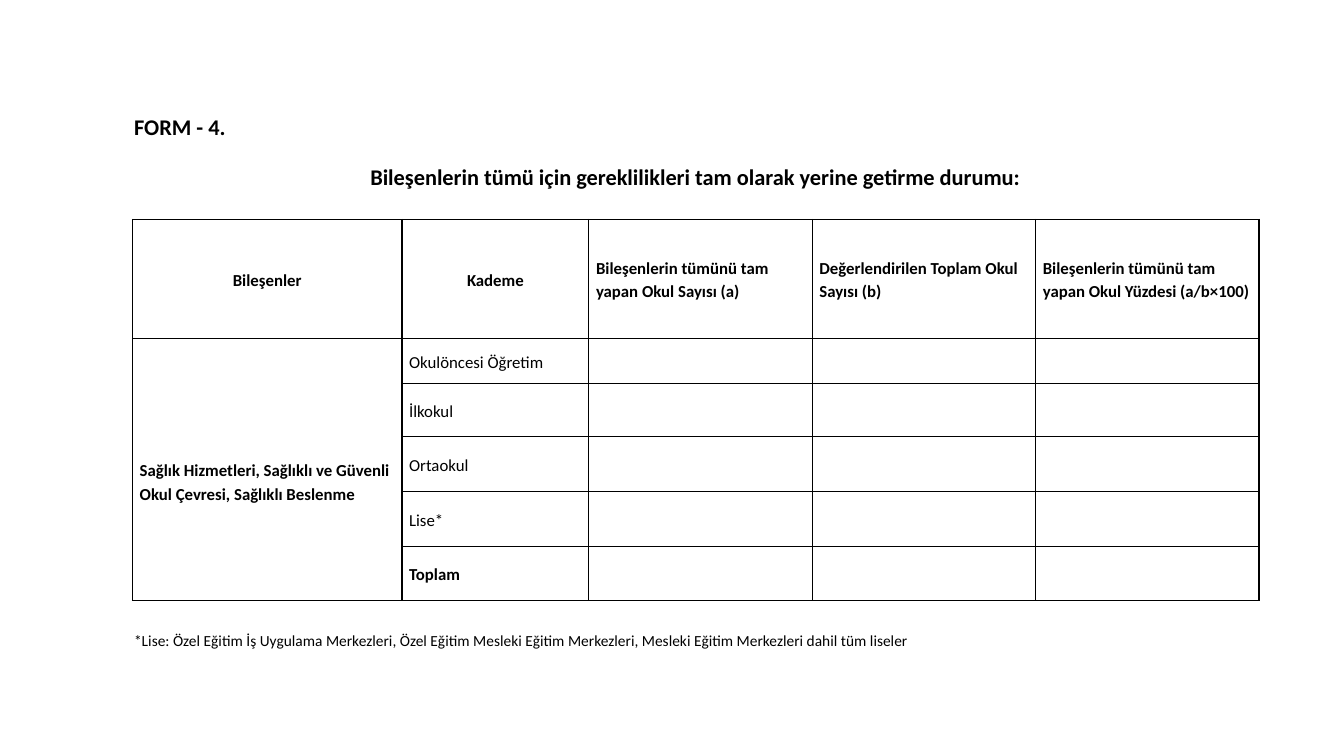
import pptx
import pptx.dml.color
import pptx.enum.text
import pptx.oxml.ns
import pptx.util
from lxml import etree
from pptx.util import Cm

COLORS = {"text": "000000", "border": "000000", "cell": "FFFFFF"}
FONT = "Calibri"
ALIGN = pptx.enum.text.PP_ALIGN
MIDDLE = pptx.enum.text.MSO_ANCHOR.MIDDLE

HEADERS = [
    "Bileşenler",
    "Kademe",
    "Bileşenlerin tümünü tam yapan Okul Sayısı (a)",
    "Değerlendirilen Toplam Okul Sayısı (b)",
    "Bileşenlerin tümünü tam yapan Okul Yüzdesi (a/b×100)",
]
COMPONENTS = "Sağlık Hizmetleri, Sağlıklı ve Güvenli Okul Çevresi, Sağlıklı Beslenme"
LEVELS = ["Okulöncesi Öğretim", "İlkokul", "Ortaokul", "Lise*", "Toplam"]
COLUMN_WIDTHS = [6.79, 4.71, 5.63, 5.63, 5.63]
ROW_HEIGHTS = [3, 1.13, 1.34, 1.39, 1.38, 1.37]


def color(name):
    return pptx.dml.color.RGBColor.from_string(COLORS[name])


def write(paragraph, text, size, bold=False, alignment=None):
    paragraph.alignment = alignment
    run = paragraph.add_run()
    run.text = text
    run.font.name = FONT
    run.font.size = pptx.util.Pt(size)
    run.font.bold = bold
    run.font.color.rgb = color("text")


def add_text(slide, left, top, width, height, text, size, bold=False, alignment=None):
    shape = slide.shapes.add_textbox(Cm(left), Cm(top), Cm(width), Cm(height))
    frame = shape.text_frame
    frame.word_wrap = True
    frame.auto_size = pptx.enum.text.MSO_AUTO_SIZE.SHAPE_TO_FIT_TEXT
    frame.vertical_anchor = MIDDLE
    write(frame.paragraphs[0], text, size, bold, alignment)


def add_borders(cell):
    properties = cell._tc.get_or_add_tcPr()
    qn = pptx.oxml.ns.qn
    for side in ("a:lnL", "a:lnR", "a:lnT", "a:lnB"):
        line = etree.SubElement(properties, qn(side), w=str(pptx.util.Pt(1)))
        fill = etree.SubElement(line, qn("a:solidFill"))
        etree.SubElement(fill, qn("a:srgbClr"), val=COLORS["border"])


def format_cell(cell):
    add_borders(cell)
    cell.fill.solid()
    cell.fill.fore_color.rgb = color("cell")
    cell.margin_left = cell.margin_right = Cm(0.18)
    cell.margin_top = cell.margin_bottom = 0
    cell.vertical_anchor = MIDDLE


def write_cell(cell, text, bold=False, alignment=None):
    paragraph = cell.text_frame.paragraphs[0]
    paragraph.line_spacing = 1.15
    write(paragraph, text, 12, bold, alignment)


def add_form_table(slide):
    frame = slide.shapes.add_table(
        len(ROW_HEIGHTS), len(COLUMN_WIDTHS), Cm(3.34), Cm(5.53),
        Cm(sum(COLUMN_WIDTHS)), Cm(sum(ROW_HEIGHTS)))
    table = frame.table
    table.first_row = table.horz_banding = False
    for column, width in zip(table.columns, COLUMN_WIDTHS):
        column.width = Cm(width)
    for row, height in zip(table.rows, ROW_HEIGHTS):
        row.height = Cm(height)
    for cell in table.iter_cells():
        format_cell(cell)

    # Header row
    for index, header in enumerate(HEADERS):
        write_cell(table.cell(0, index), header, True, ALIGN.CENTER if index < 2 else None)

    # Components cell, set slightly below the middle
    components = table.cell(1, 0)
    components.merge(table.cell(len(LEVELS), 0))
    components.margin_top = Cm(0.59)
    write_cell(components, COMPONENTS, True)

    # School levels
    for row, level in enumerate(LEVELS, start=1):
        write_cell(table.cell(row, 1), level, bold=level == "Toplam")


def main():
    presentation = pptx.Presentation()
    presentation.slide_width = Cm(33.87)
    presentation.slide_height = Cm(19.05)
    slide = presentation.slides.add_slide(presentation.slide_layouts[6])

    # Form number and title
    add_text(slide, 3.13, 2.72, 6.4, 0.94, "FORM - 4.", 16, True)
    add_text(slide, 3.33, 3.99, 28.4, 0.94,
             "Bileşenlerin tümü için gereklilikleri tam olarak yerine getirme durumu:",
             16, True, ALIGN.CENTER)

    add_form_table(slide)

    # Footnote
    add_text(slide, 3.13, 15.77, 28.4, 0.73,
             "*Lise: Özel Eğitim İş Uygulama Merkezleri, Özel Eğitim Mesleki Eğitim Merkezleri, "
             "Mesleki Eğitim Merkezleri dahil tüm liseler", 11, alignment=ALIGN.JUSTIFY)

    presentation.save("out.pptx")


if __name__ == "__main__":
    main()
